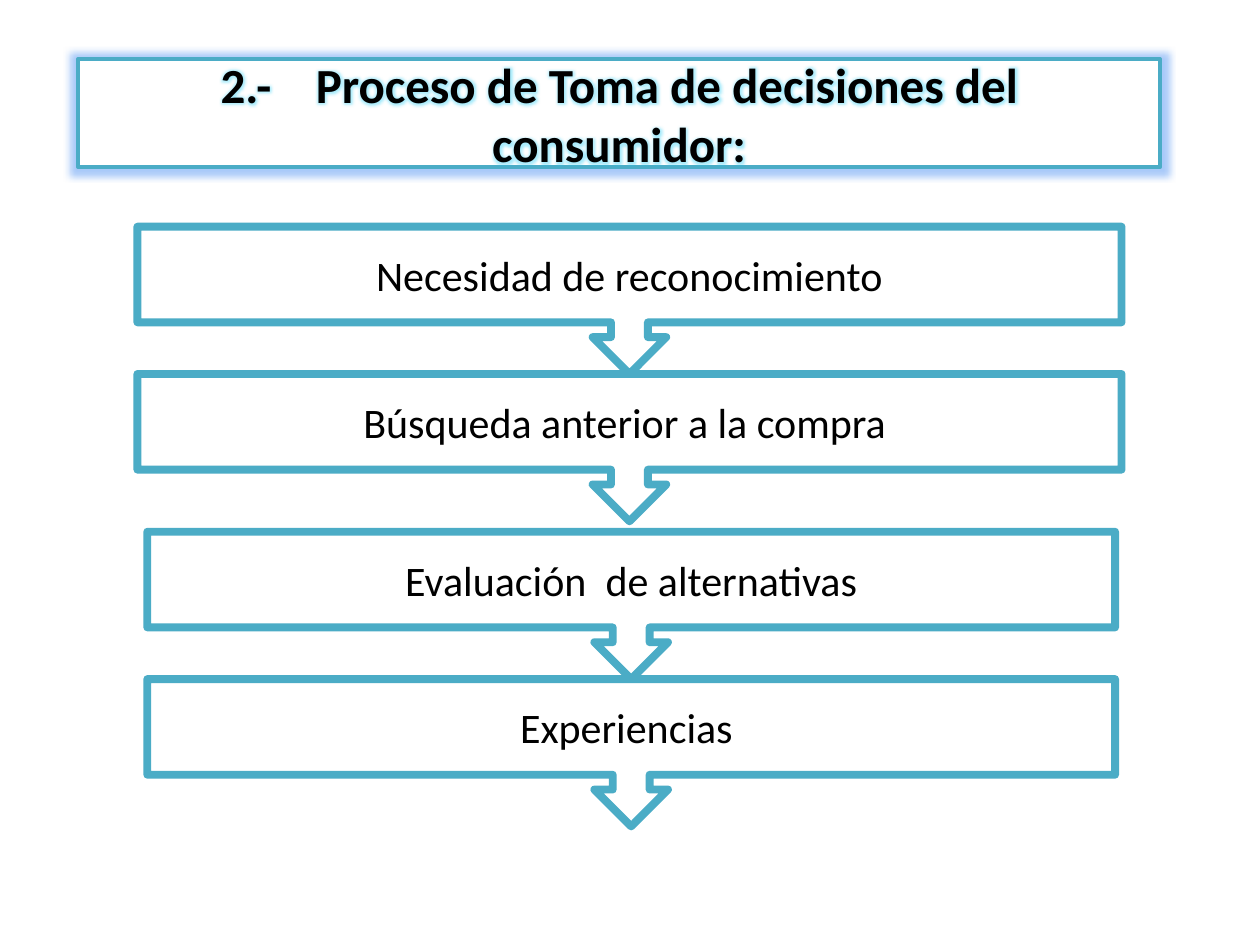
"""Build a slide showing the consumer decision process as a chain of callouts."""
from lxml import etree
from pptx import Presentation
from pptx import util as u
from pptx.dml.color import RGBColor
from pptx.enum import shapes, text
from pptx.oxml import parse_xml
from pptx.oxml.ns import nsdecls, qn

BLACK = RGBColor(0x00, 0x00, 0x00)
WHITE = RGBColor(0xFF, 0xFF, 0xFF)
TEAL = RGBColor(0x4B, 0xAC, 0xC6)
BLUE_GLOW = RGBColor(0x2A, 0x7B, 0xF0)
CYAN_GLOW = RGBColor(0x22, 0xCC, 0xF5)


class Deck:
    font = "Calibri"

    def __init__(self, prs):
        self.s = prs.slides.add_slide(prs.slide_layouts[5])

    def glow(self, parent, color, radius, alpha):
        for old in parent.findall(qn("a:effectLst")):
            parent.remove(old)
        effects = parse_xml(
            f'<a:effectLst {nsdecls("a")}><a:glow rad="{u.Pt(radius)}">'
            f'<a:srgbClr val="{color}"><a:alpha val="{alpha * 1000}"/></a:srgbClr>'
            '</a:glow></a:effectLst>')
        fill = parent.find(qn("a:solidFill"))
        outline = parent.find(qn("a:ln"))
        (fill if outline is None else outline).addnext(effects)

    def style(self, sp, line_width, label, size, bold=False):
        sp.fill.solid()
        sp.fill.fore_color.rgb = WHITE
        sp.line.color.rgb = TEAL
        sp.line.width = u.Pt(line_width)
        sp.shadow.inherit = False
        tf = sp.text_frame
        tf.text = label
        tf.word_wrap = True
        tf.auto_size = text.MSO_AUTO_SIZE.NONE
        tf.vertical_anchor = text.MSO_ANCHOR.MIDDLE
        p = tf.paragraphs[0]
        p.alignment = text.PP_ALIGN.CENTER
        r = p.runs[0]
        r.font.name = self.font
        r.font.size = u.Pt(size)
        r.font.bold = bold
        r.font.color.rgb = BLACK
        return r

    def title(self, label, left, top, width, height):
        sp = self.s.shapes.title
        sp.left, sp.top = u.Cm(left), u.Cm(top)
        sp.width, sp.height = u.Cm(width), u.Cm(height)
        props = sp.element.spPr
        geometry = etree.SubElement(props, qn("a:prstGeom"), prst="roundRect")
        etree.SubElement(geometry, qn("a:avLst"))
        r = self.style(sp, 2, label, 28, bold=True)
        self.glow(props, BLUE_GLOW, 8, 40)
        self.glow(r.font._element, CYAN_GLOW, 5, 40)

    def callout(self, label, left, top, width, height):
        sp = self.s.shapes.add_shape(
            shapes.MSO_SHAPE.DOWN_ARROW_CALLOUT,
            u.Cm(left), u.Cm(top), u.Cm(width), u.Cm(height))
        self.style(sp, 4.5, label, 24)


def main():
    prs = Presentation()
    prs.slide_width, prs.slide_height = u.Cm(25.4), u.Cm(19.05)
    deck = Deck(prs)
    deck.title("2.-    Proceso de Toma de decisiones del consumidor:",
               1.57, 1.19, 21.82, 2.18)

    step_height = 2.97
    pairs = [
        (2.77, 4.57, 19.84,
         ["Necesidad de reconocimiento", "Búsqueda anterior a la compra "]),
        (2.97, 10.72, 19.51,
         ["Evaluación  de alternativas", "Experiencias "]),
    ]
    for left, top, width, labels in pairs:
        for i, label in enumerate(labels):
            deck.callout(label, left, top + i * step_height, width, step_height)

    prs.save("out.pptx")


if __name__ == "__main__":
    main()
